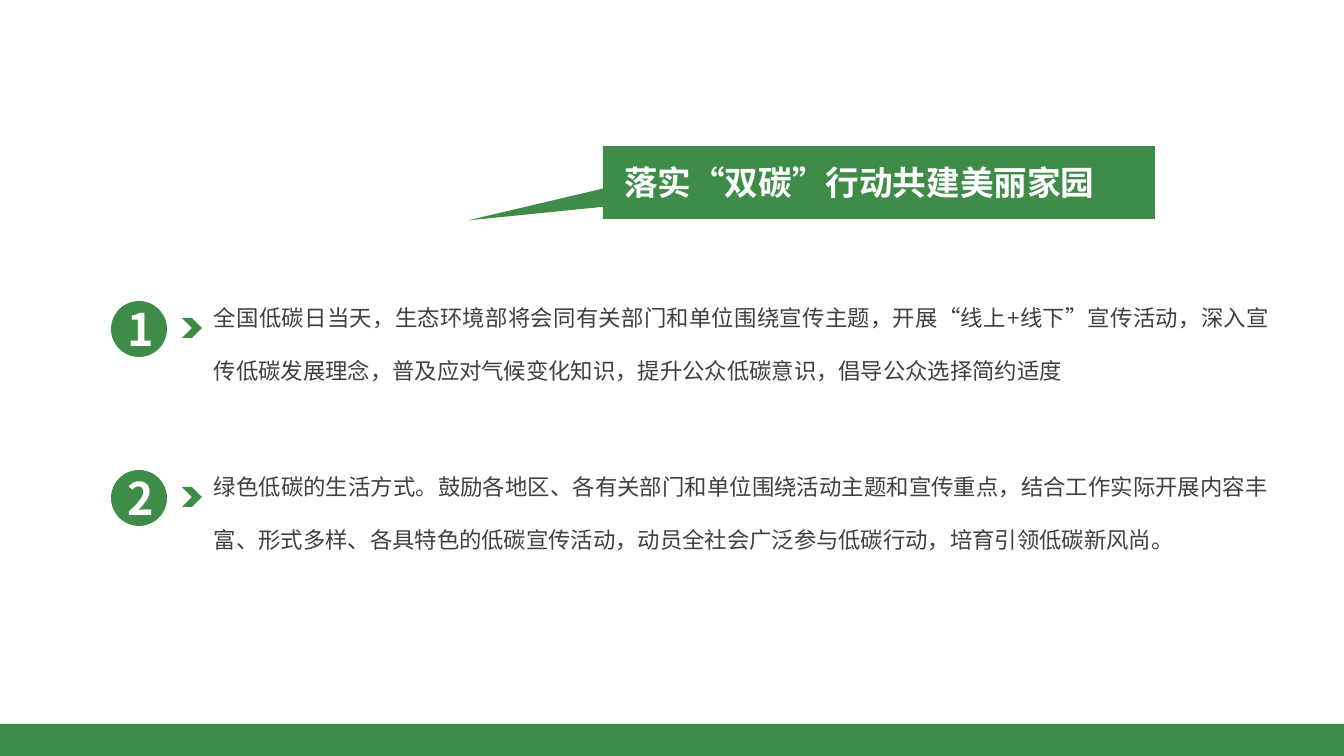
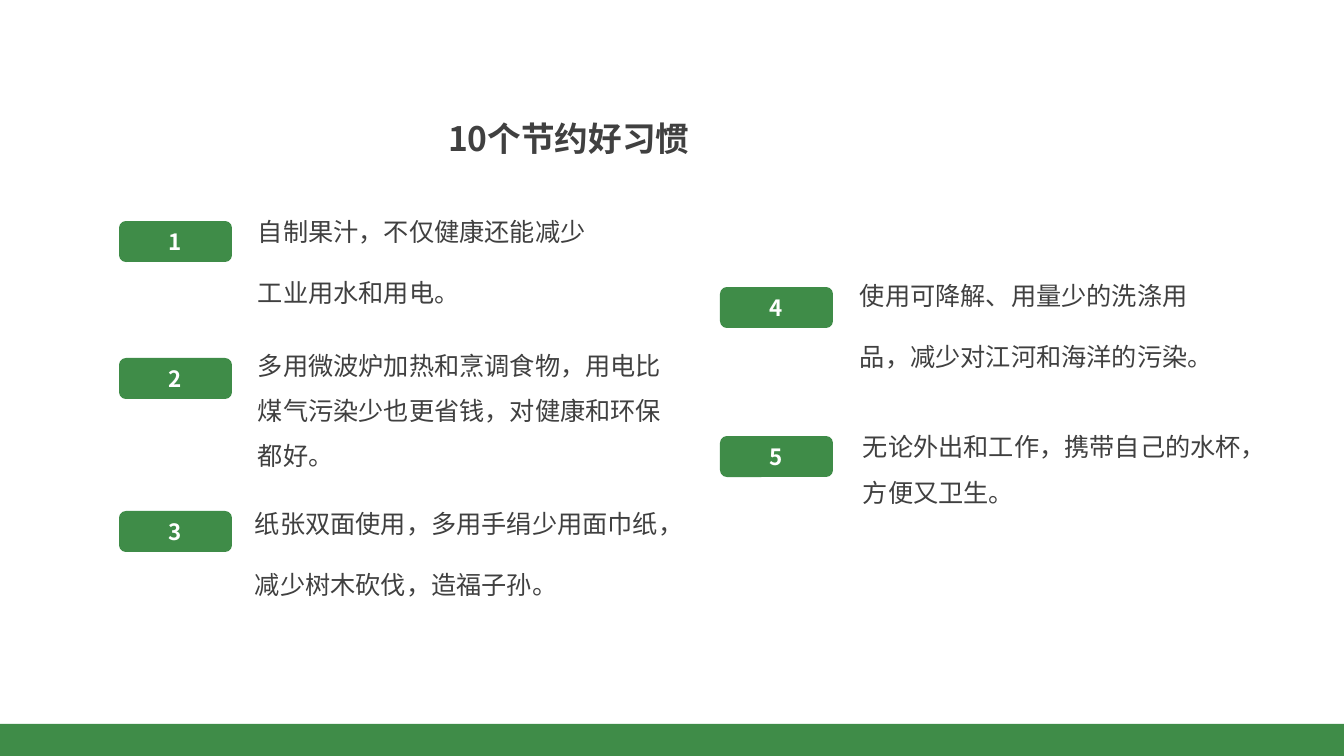
import dataclasses

import pptx
import pptx.dml.color
import pptx.enum.shapes
import pptx.enum.text
import pptx.oxml.ns
import pptx.util
from lxml import etree

SHAPE = pptx.enum.shapes.MSO_SHAPE
ALIGN = pptx.enum.text.PP_ALIGN
ANCHOR = pptx.enum.text.MSO_ANCHOR
EMU_PER_PX = 914400 / 100.8
TITLE_ONLY = 5


@dataclasses.dataclass(frozen=True)
class Theme:
    green: str = "3F8C48"
    white: str = "FFFFFF"
    ink: str = "404040"
    font: str = "Noto Sans CJK SC"
    title: int = 24
    number: int = 32
    badge: int = 16
    paragraph: int = 16
    habit: int = 18


THEME = Theme()


def px(length):
    return pptx.util.Emu(round(length * EMU_PER_PX))


def rgb(colour):
    return pptx.dml.color.RGBColor.from_string(colour)


def write(frame, text, size, colour, bold=False, align=ALIGN.LEFT,
          anchor=ANCHOR.TOP, spacing=1.0):
    frame.text = text
    frame.word_wrap = True
    frame.vertical_anchor = anchor
    paragraph = frame.paragraphs[0]
    paragraph.alignment = align
    paragraph.line_spacing = spacing
    font = paragraph.font
    font.size = pptx.util.Pt(size)
    font.bold = bold
    font.color.rgb = rgb(colour)
    font.name = THEME.font
    qn = pptx.oxml.ns.qn
    defaults = paragraph._p.pPr.find(qn("a:defRPr"))
    etree.SubElement(defaults, qn("a:ea"), typeface=THEME.font)


def add_green(slide, kind, left, top, width, height):
    shape = slide.shapes.add_shape(kind, px(left), px(top), px(width), px(height))
    shape.shadow.inherit = False
    shape.fill.solid()
    shape.fill.fore_color.rgb = rgb(THEME.green)
    shape.line.fill.background()
    return shape


def add_text(slide, left, top, width, height, text, size, **style):
    box = slide.shapes.add_textbox(px(left), px(top), px(width), px(height))
    write(box.text_frame, text, size, THEME.ink, **style)


def place_title(slide, left, top, width, height, text, colour, **style):
    """Fill the title placeholder and bring it in front of what is drawn so far."""
    title = slide.shapes.title
    title.left, title.top = px(left), px(top)
    title.width, title.height = px(width), px(height)
    title.text_frame.auto_size = pptx.enum.text.MSO_AUTO_SIZE.NONE
    write(title.text_frame, text, THEME.title, colour, bold=True,
          align=ALIGN.JUSTIFY, **style)
    slide.shapes.element.append(title.element)


def add_master_band(prs, slide):
    """Draw the bottom band, then move it to the master that all slides share."""
    band = add_green(slide, SHAPE.RECTANGLE, 0, 724, 1344, 32)
    band.element.nvSpPr.cNvPr.set("id", "100")
    prs.slide_master.shapes.element.append(band.element)


def add_callout_title(slide, left, top, text):
    callout = add_green(slide, SHAPE.RECTANGULAR_CALLOUT, left, top, 552, 73)
    callout.adjustments[0] = -0.745
    callout.adjustments[1] = 0.52
    place_title(slide, left + 11, top + 11, 529, 50, text, THEME.white)


def add_action(slide, left, top, number, text):
    circle = add_green(slide, SHAPE.OVAL, left, top + 29, 56, 56)
    frame = circle.text_frame
    frame.margin_left = px(4)
    frame.margin_right = frame.margin_top = frame.margin_bottom = 0
    write(frame, str(number), THEME.number, THEME.white, bold=True,
          align=ALIGN.CENTER, anchor=ANCHOR.MIDDLE)
    add_green(slide, SHAPE.CHEVRON, left + 71, top + 46, 20, 20)
    add_text(slide, left + 93, top, 1075, 111, text, THEME.paragraph,
             align=ALIGN.JUSTIFY, spacing=2.0)


def add_habit(slide, left, top, number, text, text_box, spacing):
    """Place a numbered badge; text_box is (dx, dy, width) from the badge."""
    badge = add_green(slide, SHAPE.ROUNDED_RECTANGLE, left, top, 113, 41)
    write(badge.text_frame, str(number), THEME.badge, THEME.white, bold=True,
          align=ALIGN.CENTER, anchor=ANCHOR.MIDDLE)
    dx, dy, width = text_box
    add_text(slide, left + dx, top + dy, width, 116, text, THEME.habit,
             anchor=ANCHOR.BOTTOM, spacing=spacing)


def build_actions(slide):
    add_callout_title(slide, 603, 146, "落实“双碳”行动共建美丽家园")
    actions = [
        "全国低碳日当天，生态环境部将会同有关部门和单位围绕宣传主题，开展“线上+线下”宣传活动，"
        "深入宣传低碳发展理念，普及应对气候变化知识，提升公众低碳意识，倡导公众选择简约适度",
        "绿色低碳的生活方式。鼓励各地区、各有关部门和单位围绕活动主题和宣传重点，结合工作实际开展"
        "内容丰富、形式多样、各具特色的低碳宣传活动，动员全社会广泛参与低碳行动，培育引领低碳新风尚。",
    ]
    for index, text in enumerate(actions):
        add_action(slide, 111, 272 + 169 * index, index + 1, text)


def build_habits(slide):
    place_title(slide, 438, 103, 417, 60, "10个节约好习惯", THEME.ink,
                anchor=ANCHOR.BOTTOM, spacing=pptx.util.Pt(25))
    left_column, right_column = 119, 720
    habits = [
        (left_column, 221, "自制果汁，不仅健康还能减少工业用水和用电。",
         (129, -25, 354), 2.0),
        (left_column, 358, "多用微波炉加热和烹调食物，用电比煤气污染少也更省钱，对健康和环保都好。",
         (129, 2, 424), 1.5),
        (left_column, 511, "纸张双面使用，多用手绢少用面巾纸，减少树木砍伐，造福子孙。",
         (126, -23, 431), 2.0),
        (right_column, 287, "使用可降解、用量少的洗涤用品，减少对江河和海洋的污染。",
         (130, -27, 354), 2.0),
        (right_column, 436, "无论外出和工作，携带自己的水杯，方便又卫生。",
         (133, -40, 424), 1.5),
    ]
    for number, (left, top, text, text_box, spacing) in enumerate(habits, 1):
        add_habit(slide, left, top, number, text, text_box, spacing)


def main():
    prs = pptx.Presentation()
    prs.slide_width, prs.slide_height = px(1344), px(756)
    layout = prs.slide_layouts[TITLE_ONLY]
    actions, habits = (prs.slides.add_slide(layout) for _ in range(2))
    add_master_band(prs, actions)
    build_actions(actions)
    build_habits(habits)
    prs.save("out.pptx")


if __name__ == "__main__":
    main()
